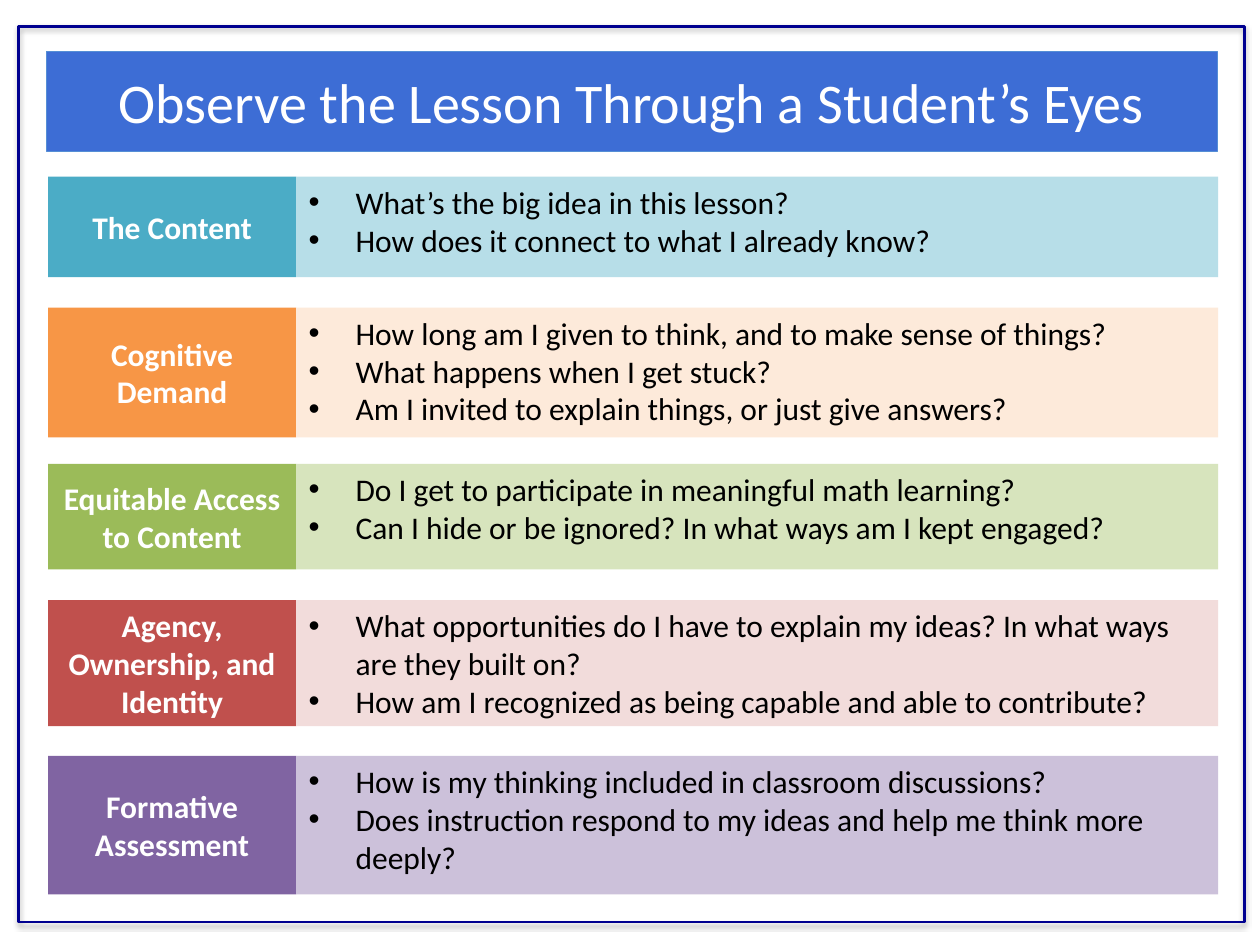
from lxml import etree
from pptx import Presentation
from pptx.dml.color import RGBColor
from pptx.enum.shapes import MSO_SHAPE
from pptx.enum.text import MSO_ANCHOR, PP_ALIGN
from pptx.oxml import parse_xml
from pptx.oxml.ns import nsdecls, qn
from pptx.util import Cm, Pt

RECTANGLE = MSO_SHAPE.RECTANGLE
TOP, MIDDLE = MSO_ANCHOR.TOP, MSO_ANCHOR.MIDDLE
LEFT, CENTER = PP_ALIGN.LEFT, PP_ALIGN.CENTER
FONT = "Calibri"

# Content
TITLE = "Observe the Lesson Through a Student’s Eyes"

# Label, label colour, question colour, top (cm), height (cm), questions
DIMENSIONS = [
    ("The Content", "4BACC6", "B7DEE8", 3.56, 2.03, [
        "What’s the big idea in this lesson?",
        "How does it connect to what I already know?"]),
    ("Cognitive Demand", "F79646", "FDEADA", 6.2, 2.62, [
        "How long am I given to think, and to make sense of things?",
        "What happens when I get stuck?",
        "Am I invited to explain things, or just give answers?"]),
    ("Equitable Access to Content", "9BBB59", "D7E4BD", 9.35, 2.13, [
        "Do I get to participate in meaningful math learning?",
        "Can I hide or be ignored? In what ways am I kept engaged?"]),
    ("Agency, Ownership, and Identity", "C0504D", "F2DCDB", 12.1, 2.54, [
        "What opportunities do I have to explain my ideas? "
        "In what ways are they built on?",
        "How am I recognized as being capable and able to contribute?"]),
    ("Formative Assessment", "8064A2", "CCC1DA", 15.24, 2.79, [
        "How is my thinking included in classroom discussions?",
        "Does instruction respond to my ideas and help me think more deeply?"]),
]

# Columns (cm)
LABEL_LEFT, LABEL_WIDTH = 0.97, 5.0
QUESTION_LEFT, QUESTION_WIDTH = LABEL_LEFT + LABEL_WIDTH, 18.59
BULLET_INDENT = Cm(0.95)


def color(value):
    return RGBColor.from_string(value)


def add_box(page, left, top, width, height, fill=None, line=None, weight=0.75):
    box = page.shapes.add_shape(
        RECTANGLE, Cm(left), Cm(top), Cm(width), Cm(height))
    box.shadow.inherit = False
    if fill:
        box.fill.solid()
        box.fill.fore_color.rgb = color(fill)
    else:
        box.fill.background()
    if line:
        box.line.color.rgb = color(line)
        box.line.width = Pt(weight)
    else:
        box.line.fill.background()
    return box


def add_bullet(para):
    properties = para._p.get_or_add_pPr()
    properties.set("marL", str(BULLET_INDENT))
    properties.set("indent", str(-BULLET_INDENT))
    etree.SubElement(properties, qn("a:buFont")).set("typeface", "Arial")
    etree.SubElement(properties, qn("a:buChar")).set("char", "•")


def write(box, lines, size, ink, bold=False, align=CENTER, anchor=MIDDLE,
          bullets=False):
    frame = box.text_frame
    frame.word_wrap = True
    frame.vertical_anchor = anchor
    frame.text = "\n".join(lines)
    for para in frame.paragraphs:
        para.alignment = align
        if bullets:
            add_bullet(para)
        for span in para.runs:
            span.font.name = FONT
            span.font.size = Pt(size)
            span.font.bold = bold
            span.font.color.rgb = color(ink)


def add_shadow(box):
    effects = box._element.spPr.find(qn("a:effectLst"))
    effects.append(parse_xml(
        f'<a:outerShdw {nsdecls("a")} blurRad="{Pt(3.1)}" dist="{Pt(1.8)}" '
        'dir="5400000" rotWithShape="0"><a:srgbClr val="000000">'
        '<a:alpha val="35000"/></a:srgbClr></a:outerShdw>'))


def main():
    deck = Presentation()
    deck.slide_width, deck.slide_height = Cm(25.4), Cm(19.05)
    page = deck.slides.add_slide(deck.slide_layouts[6])

    # Title band
    title = add_box(page, 0.94, 1.04, 23.6, 2.01, "3D6DD5", "558ED5")
    write(title, [TITLE], 32, "FFFFFF")

    # One row per dimension: label and questions
    for name, strong, pale, top, height, questions in DIMENSIONS:
        label = add_box(page, LABEL_LEFT, top, LABEL_WIDTH, height, strong)
        write(label, [name], 18, "FFFFFF", bold=True)
        panel = add_box(page, QUESTION_LEFT, top, QUESTION_WIDTH, height, pale)
        write(panel, questions, 18, "000000", align=LEFT, anchor=TOP,
              bullets=True)

    # Frame around the page
    border = add_box(page, 0.38, 0.53, 24.71, 18.06, line="000090", weight=1.5)
    add_shadow(border)

    deck.save("out.pptx")


if __name__ == "__main__":
    main()
